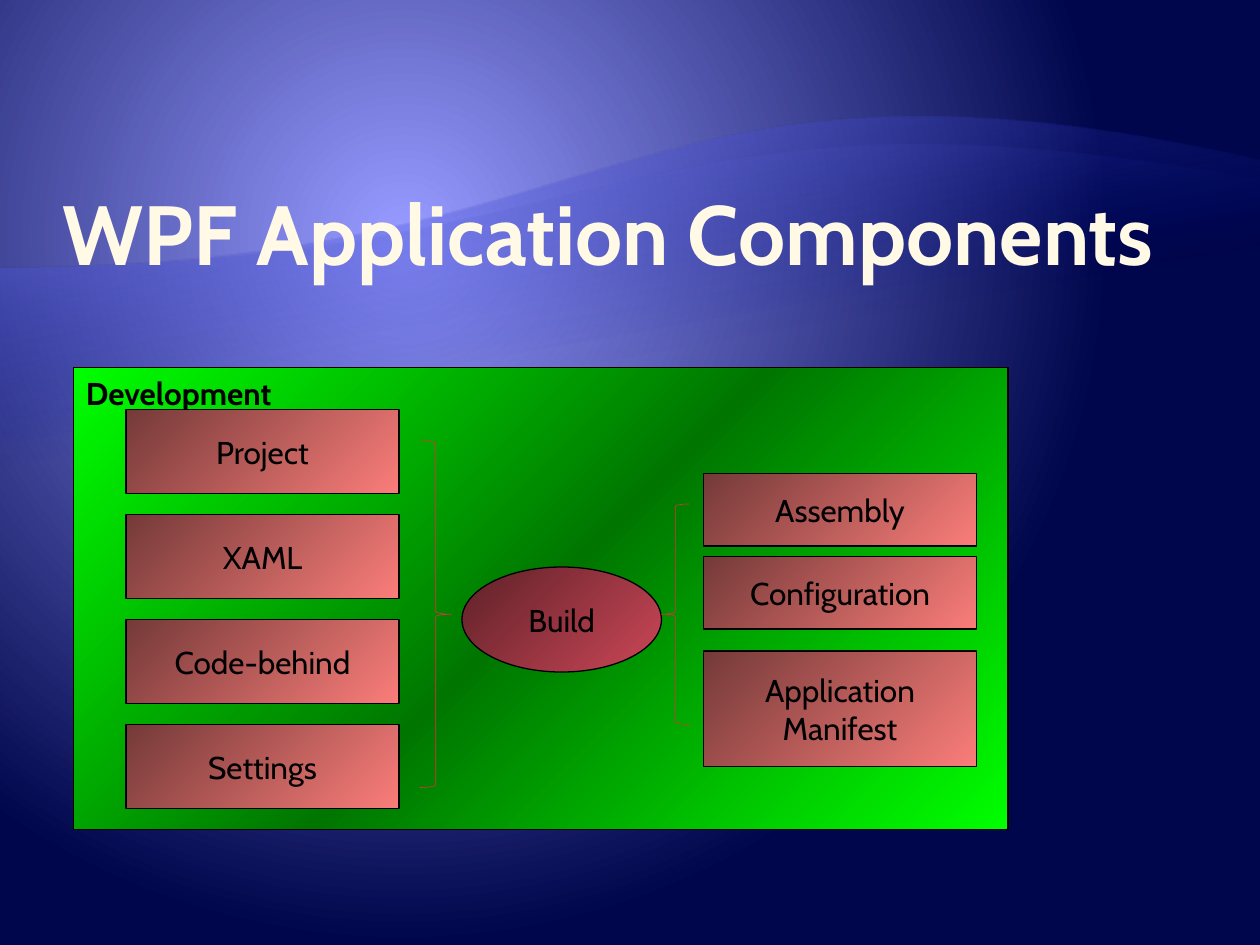
from lxml import etree
from pptx import Presentation
from pptx.dml.color import RGBColor
from pptx.enum.shapes import MSO_SHAPE
from pptx.enum.text import MSO_ANCHOR, PP_ALIGN
from pptx.oxml.ns import qn
from pptx.util import Pt

RECT, OVAL = MSO_SHAPE.RECTANGLE, MSO_SHAPE.OVAL
WAVE = MSO_SHAPE.FLOWCHART_DOCUMENT
LEFT_BRACE, RIGHT_BRACE = MSO_SHAPE.LEFT_BRACE, MSO_SHAPE.RIGHT_BRACE
TOP, MIDDLE, BOTTOM = MSO_ANCHOR.TOP, MSO_ANCHOR.MIDDLE, MSO_ANCHOR.BOTTOM
LEFT, CENTER = PP_ALIGN.LEFT, PP_ALIGN.CENTER

FONT = "Cabin"
GREEN = [(0, "00FF00"), (50, "007600"), (100, "00FF00")]
CORAL = [(0, "743A38"), (100, "FA7D7A")]
CRIMSON = [(0, "5E2128"), (100, "CC4757")]


def color(hex_value):
    return RGBColor.from_string(hex_value)


def add_node(parent, tag, **attrs):
    values = {name: str(value) for name, value in attrs.items()}
    return etree.SubElement(parent, qn(tag), values)


def write_gradient(fill, stops, angle=None, center=None):
    """Stops are (percent, colour[, opacity]); center makes it radial."""
    fill.gradient()
    grad = fill._xPr.find(qn("a:gradFill"))
    for child in list(grad):
        grad.remove(child)
    gs_list = add_node(grad, "a:gsLst")
    for pos, hex_value, *opacity in stops:
        gs = add_node(gs_list, "a:gs", pos=pos * 1000)
        clr = add_node(gs, "a:srgbClr", val=color(hex_value))
        if opacity:
            add_node(clr, "a:alpha", val=opacity[0] * 1000)
    if center:
        x, y = center
        path = add_node(grad, "a:path", path="circle")
        add_node(path, "a:fillToRect", l=x * 1000, t=y * 1000,
                 r=(100 - x) * 1000, b=(100 - y) * 1000)
    else:
        add_node(grad, "a:lin", ang=angle * 60000, scaled=0)


def add_shape(s, kind, x, y, w, h):
    sp = s.shapes.add_shape(kind, Pt(x), Pt(y), Pt(w), Pt(h))
    sp.shadow.inherit = False
    return sp


def set_line(sp, hex_value, width):
    sp.line.color.rgb = color(hex_value)
    sp.line.width = Pt(width)


def set_text(tf, text, size, hex_value, bold=False, align=LEFT, anchor=TOP):
    tf.text = text
    tf.vertical_anchor = anchor
    for p in tf.paragraphs:
        p.alignment = align
        for r in p.runs:
            r.font.name = FONT
            r.font.size = Pt(size)
            r.font.bold = bold
            r.font.color.rgb = color(hex_value)


def add_wave(s, y, h, stops):
    sp = add_shape(s, WAVE, 0, y, 720, h)
    sp.rotation = 180
    write_gradient(sp.fill, stops, angle=80)
    sp.line.fill.background()


def add_box(s, kind, x, y, w, h, stops, text, **style):
    sp = add_shape(s, kind, x, y, w, h)
    write_gradient(sp.fill, stops, angle=45)
    set_line(sp, "000000", 0.75)
    sp.text_frame.word_wrap = False
    set_text(sp.text_frame, text, 18, "000000", **style)


def add_node_box(s, kind, x, y, w, h, stops, text):
    add_box(s, kind, x, y, w, h, stops, text, align=CENTER, anchor=MIDDLE)


def add_brace(s, kind, x, y, w, h):
    sp = add_shape(s, kind, x, y, w, h)
    sp.fill.background()
    set_line(sp, "E72C43", 0.35)


def add_title(s, text):
    tf = s.shapes.add_textbox(Pt(36), Pt(72), Pt(648), Pt(90)).text_frame
    tf.word_wrap = True
    tf.margin_left = tf.margin_right = 0
    tf.margin_top = tf.margin_bottom = Pt(0.72)
    set_text(tf, text, 48, "FFF9E5", bold=True, anchor=BOTTOM)


def main():
    prs = Presentation()
    prs.slide_width, prs.slide_height = Pt(720), Pt(540)
    s = prs.slides.add_slide(prs.slide_layouts[6])

    # Background glow and waves
    write_gradient(s.background.fill,
                   [(0, "969AFF"), (1, "969AFF"), (90, "00064B")],
                   center=(32, 25))
    add_wave(s, 60.5, 467.5, [(65, "000D9E", 0), (100, "797FFF", 55)])
    add_wave(s, 78, 380, [(65, "000D9E", 0), (100, "A3A7FF", 30)])

    add_title(s, "WPF Application Components")

    # Development panel
    add_box(s, RECT, 42, 210, 534, 264, GREEN, "Development", bold=True)

    # Build inputs, evenly stacked
    inputs = ["Project", "XAML", "Code-behind", "Settings"]
    for i, text in enumerate(inputs):
        add_node_box(s, RECT, 72, 234 + 60 * i, 156, 48, CORAL, text)

    # Build step
    add_node_box(s, OVAL, 264, 324, 114, 60, CRIMSON, "Build")

    # Build outputs
    outputs = [("Assembly", 270.5, 41.5), ("Configuration", 318, 41.5),
               ("Application\nManifest", 372, 66)]
    for text, y, h in outputs:
        add_node_box(s, RECT, 402, y, 156, h, CORAL, text)

    # Braces joining inputs and outputs to the build
    add_brace(s, RIGHT_BRACE, 240, 252, 18, 198)
    add_brace(s, LEFT_BRACE, 378, 288, 16, 126)

    prs.save("out.pptx")


if __name__ == "__main__":
    main()
